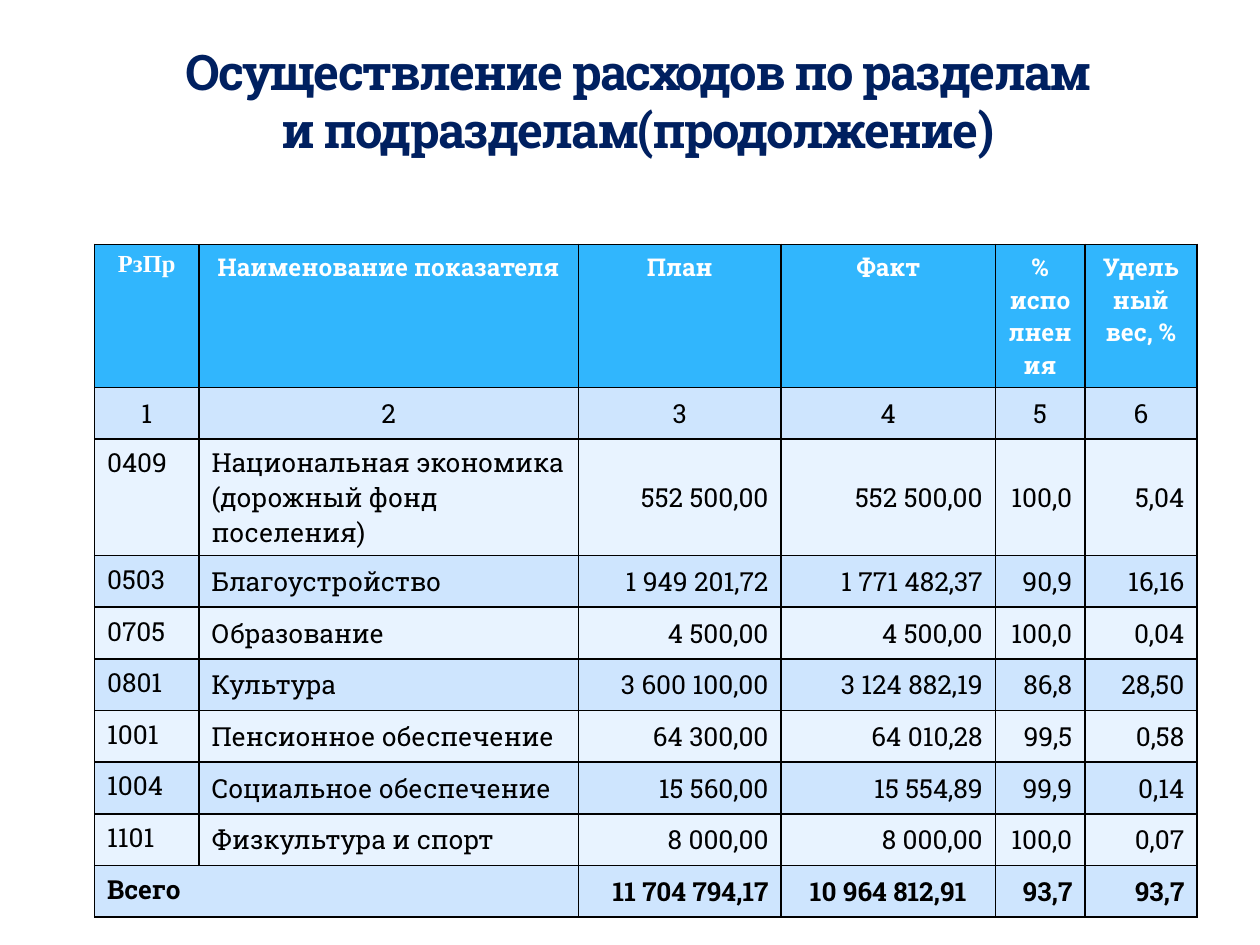
from dataclasses import dataclass

from lxml import etree
from pptx import Presentation
from pptx.dml.color import RGBColor
from pptx.enum import text
from pptx.oxml.ns import qn
from pptx.util import Inches, Pt


@dataclass(frozen=True)
class Theme:
    font: str = "Roboto Slab"
    code_font: str = "Times New Roman"
    title_color: str = "002060"
    header_fill: str = "31B6FD"
    header_color: str = "FFFFFF"
    body_color: str = "000000"
    border: str = "000000"
    bands: tuple = ("E8F3FF", "CEE5FE")
    title_size: int = 28
    header_size: int = 14
    body_size: int = 15


THEME = Theme()
LEFT, CENTER, RIGHT = text.PP_ALIGN.LEFT, text.PP_ALIGN.CENTER, text.PP_ALIGN.RIGHT
TITLE = "Осуществление расходов по разделам и подразделам(продолжение)"
COLUMN_WIDTHS = (0.83, 3.01, 1.61, 1.7, 0.71, 0.89)
HEADER_HEIGHT, ROW_HEIGHT = 0.87, 0.41
ALIGNMENTS = (LEFT, LEFT, RIGHT, RIGHT, RIGHT, RIGHT)
ROWS = (
    ("РзПр", "Наименование показателя", "План", "Факт", "% исполнения", "Удельный вес, %"),
    ("1", "2", "3", "4", "5", "6"),
    ("0409", "Национальная экономика (дорожный фонд поселения)",
     "552 500,00", "552 500,00", "100,0", "5,04"),
    ("0503", "Благоустройство", "1 949 201,72", "1 771 482,37", "90,9", "16,16"),
    ("0705", "Образование", "4 500,00", "4 500,00", "100,0", "0,04"),
    ("0801", "Культура", "3 600 100,00", "3 124 882,19", "86,8", "28,50"),
    ("1001", "Пенсионное обеспечение", "64 300,00", "64 010,28", "99,5", "0,58"),
    ("1004", "Социальное обеспечение", "15 560,00", "15 554,89", "99,9", "0,14"),
    ("1101", "Физкультура и спорт", "8 000,00", "8 000,00", "100,0", "0,07"),
    ("Всего", "", "11 704 794,17", "10 964 812,91", "93,7", "93,7"),
)


def format_paragraph(paragraph, alignment, size, color, bold, font=THEME.font):
    paragraph.alignment = alignment
    for run in paragraph.runs:
        run.font.name = font
        run.font.size = Pt(size)
        run.font.bold = bold
        run.font.color.rgb = RGBColor.from_string(color)


def add_borders(cell):
    properties = cell._tc.get_or_add_tcPr()
    for position, side in enumerate(("a:lnL", "a:lnR", "a:lnT", "a:lnB")):
        line = etree.Element(qn(side), w=str(Pt(1)))
        fill = etree.SubElement(line, qn("a:solidFill"))
        etree.SubElement(fill, qn("a:srgbClr"), val=THEME.border)
        properties.insert(position, line)


def add_title(slide, left, top, width, height):
    shape = slide.shapes.add_textbox(left, top, width, height)
    frame = shape.text_frame
    frame.word_wrap = True
    frame.vertical_anchor = text.MSO_ANCHOR.BOTTOM
    frame.margin_top = frame.margin_bottom = 0
    frame.text = TITLE
    paragraph = frame.paragraphs[0]
    format_paragraph(paragraph, CENTER, THEME.title_size, THEME.title_color, True)
    paragraph.runs[0].font._element.set("spc", "-100")


def fill_cell(cell, value, row, column):
    is_header, is_total = row == 0, row == len(ROWS) - 1
    centered = row < 2 or (is_total and column == 3)
    at_top = is_header or (column == 0 and row > 1)
    cell.text = value
    cell.vertical_anchor = text.MSO_ANCHOR.TOP if at_top else text.MSO_ANCHOR.MIDDLE
    cell.fill.solid()
    fill = THEME.header_fill if is_header else THEME.bands[row % 2]
    cell.fill.fore_color.rgb = RGBColor.from_string(fill)
    format_paragraph(
        cell.text_frame.paragraphs[0],
        CENTER if centered else ALIGNMENTS[column],
        THEME.header_size if is_header else THEME.body_size,
        THEME.header_color if is_header else THEME.body_color,
        is_header or is_total,
        THEME.code_font if is_header and column == 0 else THEME.font,
    )
    add_borders(cell)


def add_expense_table(slide, left, top, width, height):
    shape = slide.shapes.add_table(len(ROWS), len(COLUMN_WIDTHS), left, top, width, height)
    table = shape.table
    for column, column_width in zip(table.columns, COLUMN_WIDTHS):
        column.width = Inches(column_width)
    for index, row in enumerate(table.rows):
        row.height = Inches(ROW_HEIGHT if index else HEADER_HEIGHT)
    for row, values in enumerate(ROWS):
        for column, value in enumerate(values):
            fill_cell(table.cell(row, column), value, row, column)
    last = len(ROWS) - 1
    table.cell(last, 0).merge(table.cell(last, 1))


def main():
    presentation = Presentation()
    presentation.slide_width, presentation.slide_height = Inches(10), Inches(7.5)
    slide = presentation.slides.add_slide(presentation.slide_layouts[6])
    add_expense_table(slide, Inches(0.75), Inches(1.94), Inches(8.74), Inches(4.88))
    add_title(slide, Inches(1.22), Inches(0.76), Inches(7.68), Inches(0.5))
    presentation.save("out.pptx")


if __name__ == "__main__":
    main()
